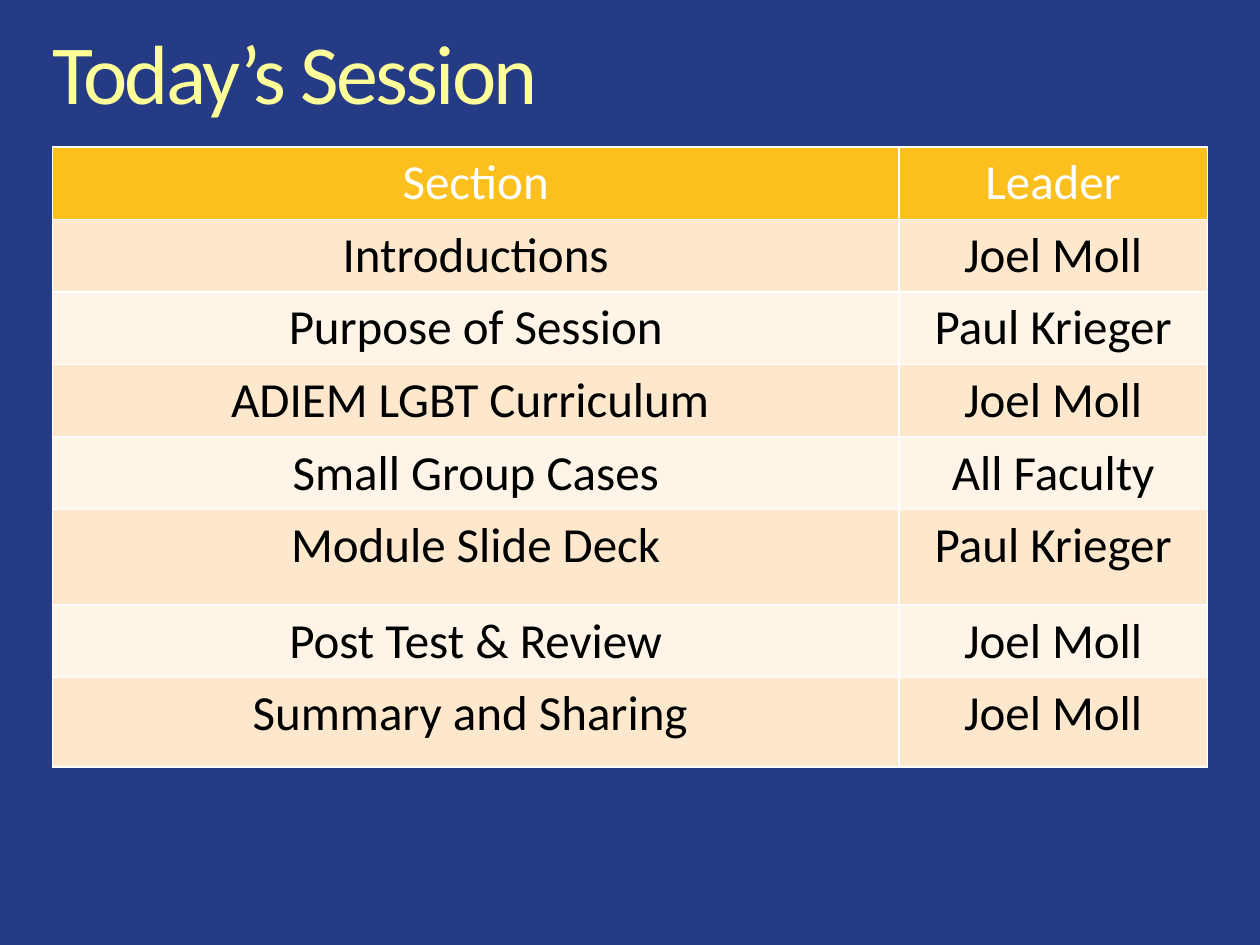
from dataclasses import dataclass

from lxml.etree import SubElement
from pptx import Presentation
from pptx.dml.color import RGBColor
from pptx.enum.text import MSO_ANCHOR, MSO_AUTO_SIZE, PP_ALIGN
from pptx.oxml.ns import qn
from pptx.util import Pt


@dataclass(frozen=True)
class Theme:
    font: str = "Calibri"
    title_size: int = 48
    table_size: int = 28
    background: str = "263B86"
    title: str = "FFFF99"
    header: str = "FBC01E"
    header_text: str = "FFFFFF"
    body_text: str = "000000"
    bands: tuple = ("FDE8CD", "FEF4E8")
    border: str = "FFFFFF"
    border_width: int = 1


def write_text(frame, text, *, font, size, color, align=PP_ALIGN.LEFT,
               line_spacing=None, tracking=None):
    """Fill a text frame with one formatted paragraph; tracking is in points."""
    paragraph = frame.paragraphs[0]
    paragraph.alignment = align
    if line_spacing is not None:
        paragraph.line_spacing = line_spacing
    span = paragraph.add_run()
    span.text = text
    span.font.name = font
    span.font.size = Pt(size)
    span.font.bold = False
    span.font.color.rgb = RGBColor.from_string(color)
    if tracking is not None:
        span.font._element.set("spc", str(round(tracking * 100)))


def add_borders(cell, color, width):
    properties = cell._tc.get_or_add_tcPr()
    for side in ("lnL", "lnR", "lnT", "lnB"):
        line = SubElement(properties, qn(f"a:{side}"), w=str(Pt(width)))
        fill = SubElement(line, qn("a:solidFill"))
        SubElement(fill, qn("a:srgbClr"), val=color)


class SlideBuilder:
    def __init__(self, page, theme):
        self.page = page
        self.theme = theme

    def background(self):
        fill = self.page.background.fill
        fill.solid()
        fill.fore_color.rgb = RGBColor.from_string(self.theme.background)

    def title(self, text, left, top, width, height):
        box = self.page.shapes.title
        box.left, box.top, box.width, box.height = map(Pt, (left, top, width, height))
        frame = box.text_frame
        frame.margin_left = frame.margin_right = 0
        frame.margin_top = frame.margin_bottom = 0
        frame.word_wrap = True
        frame.auto_size = MSO_AUTO_SIZE.NONE
        frame.vertical_anchor = MSO_ANCHOR.TOP
        write_text(frame, text, font=self.theme.font, size=self.theme.title_size,
                   color=self.theme.title, line_spacing=0.9, tracking=-1.5)

    def table(self, rows, left, top, column_widths, row_heights):
        """Add a table whose first row is the header and the rest are banded."""
        theme = self.theme
        table = self.page.shapes.add_table(
            len(rows), len(column_widths), Pt(left), Pt(top),
            Pt(sum(column_widths)), Pt(sum(row_heights))).table
        table.first_row = table.horz_banding = False
        for column, width in zip(table.columns, column_widths):
            column.width = Pt(width)
        for index, (values, height) in enumerate(zip(rows, row_heights)):
            table.rows[index].height = Pt(height)
            is_header = index == 0
            fill = theme.header if is_header else theme.bands[(index - 1) % 2]
            color = theme.header_text if is_header else theme.body_text
            for cell, text in zip(table.rows[index].cells, values):
                add_borders(cell, theme.border, theme.border_width)
                cell.fill.solid()
                cell.fill.fore_color.rgb = RGBColor.from_string(fill)
                write_text(cell.text_frame, text, font=theme.font,
                           size=theme.table_size, color=color,
                           align=PP_ALIGN.CENTER)


AGENDA = [
    ("Section", "Leader"),
    ("Introductions", "Joel Moll"),
    ("Purpose of Session", "Paul Krieger"),
    ("ADIEM LGBT Curriculum ", "Joel Moll"),
    ("Small Group Cases", "All Faculty"),
    ("Module Slide Deck", "Paul Krieger"),
    ("Post Test & Review", "Joel Moll"),
    ("Summary and Sharing ", "Joel Moll"),
]


def main():
    deck = Presentation()
    deck.slide_width, deck.slide_height = Pt(720), Pt(540)
    page = deck.slides.add_slide(deck.slide_layouts.get_by_name("Title Only"))
    builder = SlideBuilder(page, Theme())
    margin = 30
    builder.background()
    builder.title("Today’s Session", margin, 18, 660, 53)
    builder.table(AGENDA, margin, 84, column_widths=(483.6, 176.4),
                  row_heights=[38.4] * 5 + [54.6, 38.4, 51])
    deck.save("out.pptx")


if __name__ == "__main__":
    main()
